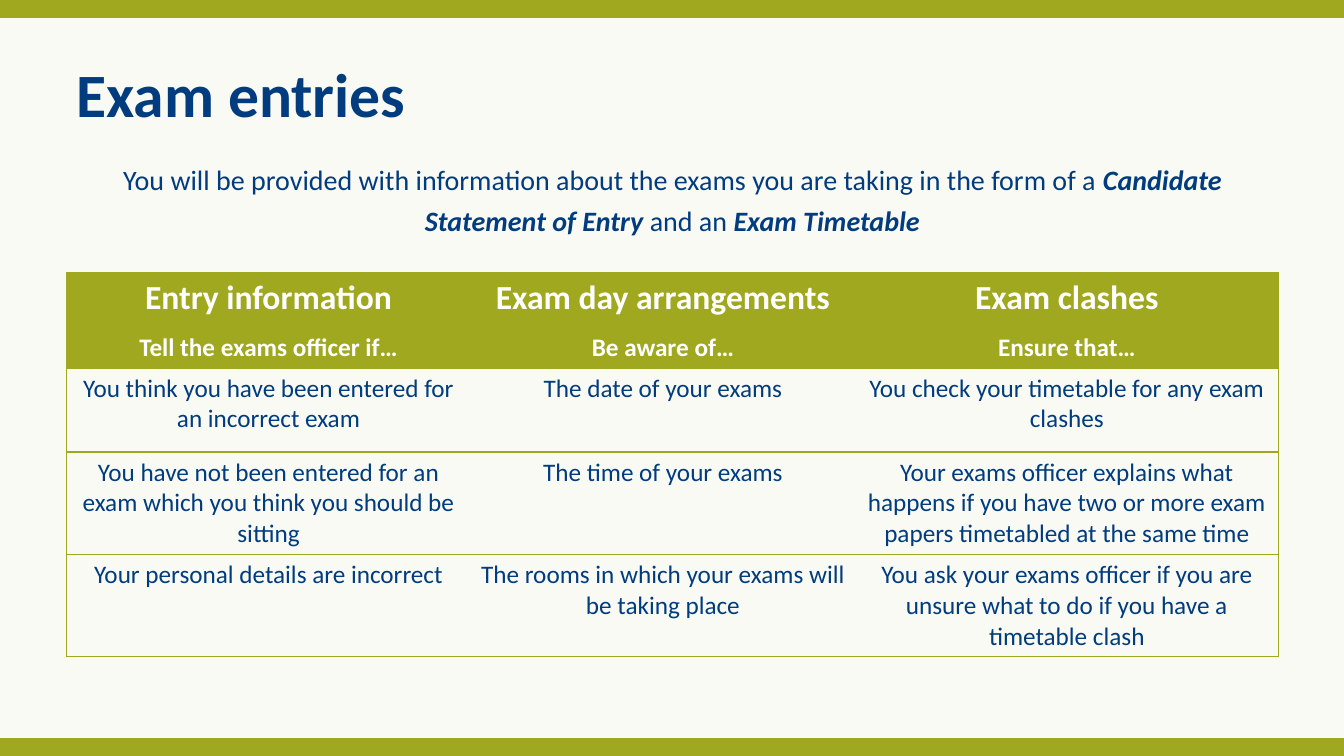
from lxml.etree import SubElement
from pptx import Presentation
from pptx.dml.color import RGBColor
from pptx.enum.shapes import MSO_CONNECTOR
from pptx.enum.text import MSO_ANCHOR, MSO_AUTO_SIZE, PP_ALIGN
from pptx.oxml.ns import qn
from pptx.util import Pt

NAVY = RGBColor(0x00, 0x3C, 0x7E)
OLIVE = RGBColor(0x9F, 0xA8, 0x1E)
CREAM = RGBColor(0xFA, 0xFA, 0xF5)
WHITE = RGBColor(0xFF, 0xFF, 0xFF)

SLIDE_WIDTH, SLIDE_HEIGHT = Pt(960), Pt(540)
MARGIN, CONTENT_WIDTH = Pt(47.3), Pt(866)
COLUMN_WIDTHS = (289, 274.5, 302.5)
ROW_HEIGHTS = (68.4, 60, 73, 73)

INTRO = (
    ("You will be provided with information about the exams you are taking in the form of a ", False),
    ("Candidate Statement of Entry ", True),
    ("and an ", False),
    ("Exam Timetable", True),
)
HEADINGS = (
    ("Entry information", "Tell the exams officer if…"),
    ("Exam day arrangements", "Be aware of…"),
    ("Exam clashes", "Ensure that…"),
)
ADVICE = (
    ("You think you have been entered for an incorrect exam",
     "The date of your exams",
     "You check your timetable for any exam clashes"),
    ("You have not been entered for an exam which you think you should be sitting",
     "The time of your exams",
     "Your exams officer explains what happens if you have two or more exam "
     "papers timetabled at the same time"),
    ("Your personal details are incorrect",
     "The rooms in which your exams will be taking place",
     "You ask your exams officer if you are unsure what to do if you have a timetable clash"),
)


def apply_format(target, values):
    """Set each named attribute of the target."""
    for name, value in values.items():
        setattr(target, name, value)


def add_text(paragraph, text, size, colour, bold=False, italic=False):
    """Append a formatted run to a paragraph."""
    run = paragraph.add_run()
    run.text = text
    apply_format(run.font, {"name": "Calibri", "size": Pt(size), "bold": bold, "italic": italic})
    run.font.color.rgb = colour


def add_band(slide, y):
    """Draw a thick olive line across the slide."""
    band = slide.shapes.add_connector(MSO_CONNECTOR.STRAIGHT, 0, y, SLIDE_WIDTH, y)
    band.line.width = Pt(13)
    band.line.color.rgb = OLIVE
    SubElement(band._element.spPr, qn("a:effectLst"))


def place(placeholder, top, spacing, alignment):
    """Position a placeholder and return its first paragraph."""
    apply_format(placeholder, {"left": MARGIN, "top": top, "width": CONTENT_WIDTH, "height": Pt(66)})
    apply_format(placeholder.text_frame, {
        "word_wrap": True, "auto_size": MSO_AUTO_SIZE.NONE, "vertical_anchor": MSO_ANCHOR.TOP})
    paragraph = placeholder.text_frame.paragraphs[0]
    apply_format(paragraph, {"alignment": alignment, "line_spacing": spacing, "space_before": Pt(0)})
    return paragraph


def add_intro(placeholder):
    """Write the introduction without a bullet."""
    paragraph = place(placeholder, Pt(108), 1.2, PP_ALIGN.CENTER)
    properties = paragraph._p.get_or_add_pPr()
    properties.set("marL", "0")
    properties.set("indent", "0")
    SubElement(properties, qn("a:buNone"))
    for text, emphasis in INTRO:
        add_text(paragraph, text, 20, NAVY, emphasis, emphasis)


def set_borders(cell, olive_sides):
    """Give the cell olive lines on the named sides and none elsewhere."""
    properties = cell._tc.get_or_add_tcPr()
    for side in "LRTB":
        border = SubElement(properties, qn(f"a:ln{side}"), w=str(Pt(1)))
        if side in olive_sides:
            fill = SubElement(border, qn("a:solidFill"))
            SubElement(fill, qn("a:srgbClr"), val=str(OLIVE))
        else:
            SubElement(border, qn("a:noFill"))


def fill_heading(cell, heading, lead):
    """Write a white heading and its lead-in on olive."""
    cell.fill.solid()
    cell.fill.fore_color.rgb = OLIVE
    title = cell.text_frame.paragraphs[0]
    subtitle = cell.text_frame.add_paragraph()
    subtitle.space_before = Pt(9.8)
    add_text(title, heading, 24, WHITE, bold=True)
    add_text(subtitle, lead, 18, WHITE, bold=True)


def fill_advice(cell, text):
    """Write navy advice in an unfilled cell."""
    cell.fill.background()
    add_text(cell.text_frame.paragraphs[0], text, 18, NAVY)


def add_advice_table(slide):
    """Add the table of headings and advice."""
    table = slide.shapes.add_table(
        len(ROW_HEIGHTS), len(COLUMN_WIDTHS), MARGIN, Pt(194.5),
        CONTENT_WIDTH, Pt(sum(ROW_HEIGHTS))).table
    apply_format(table, {"first_row": False, "horz_banding": False})
    for column, width in zip(table.columns, COLUMN_WIDTHS):
        column.width = Pt(width)
    for row, height in zip(table.rows, ROW_HEIGHTS):
        row.height = Pt(height)
    last = len(COLUMN_WIDTHS) - 1
    for r, texts in enumerate((HEADINGS, *ADVICE)):
        for c, text in enumerate(texts):
            cell = table.cell(r, c)
            set_borders(cell, "TB" + "L" * (c == 0) + "R" * (c == last))
            if r == 0:
                fill_heading(cell, *text)
            else:
                fill_advice(cell, text)
            for paragraph in cell.text_frame.paragraphs:
                paragraph.alignment = PP_ALIGN.CENTER


def main():
    """Build and save the exam entries slide."""
    deck = Presentation()
    apply_format(deck, {"slide_width": SLIDE_WIDTH, "slide_height": SLIDE_HEIGHT})
    slide = deck.slides.add_slide(deck.slide_layouts[1])
    slide.background.fill.solid()
    slide.background.fill.fore_color.rgb = CREAM
    for y in (Pt(533.5), Pt(6.5)):
        add_band(slide, y)
    title = place(slide.shapes.title, Pt(42), 0.9, PP_ALIGN.LEFT)
    add_text(title, "Exam entries", 44, NAVY, bold=True)
    add_intro(slide.placeholders[1])
    add_advice_table(slide)
    deck.save("out.pptx")


if __name__ == "__main__":
    main()
